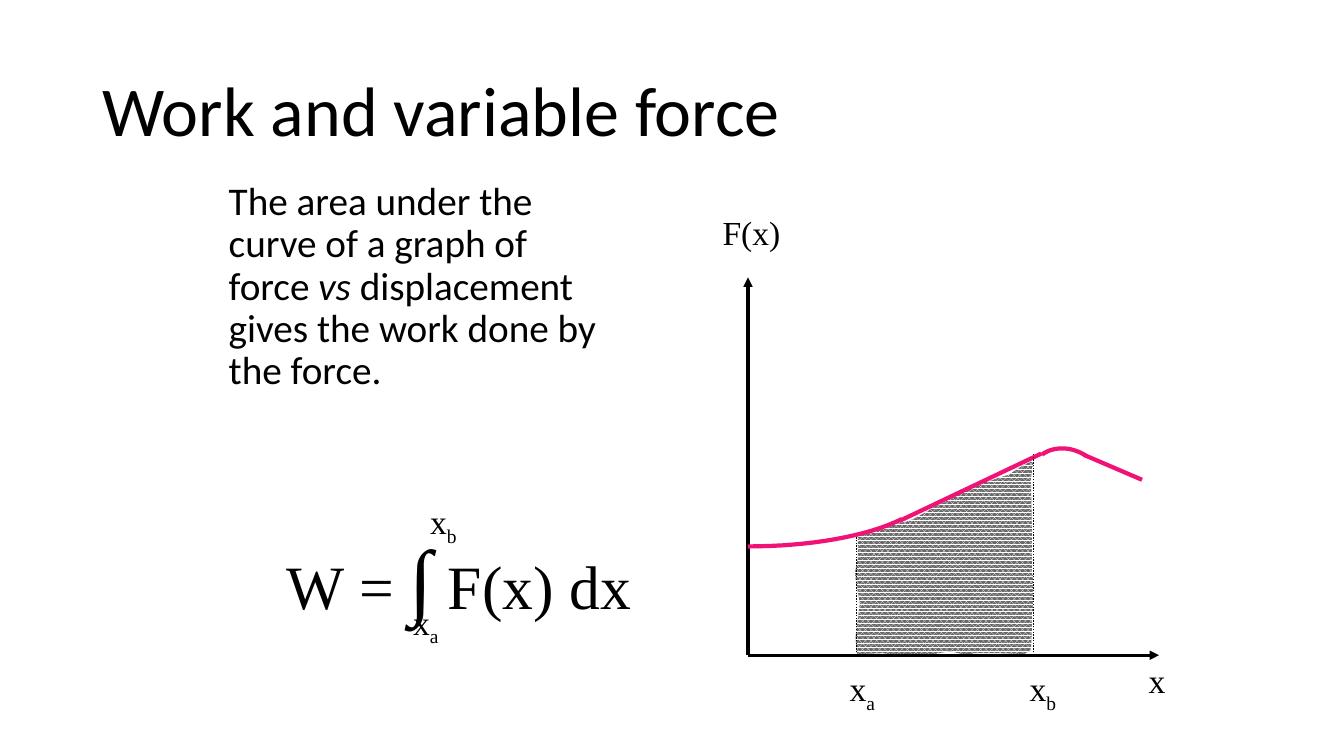
from pptx import Presentation
from pptx import util as u
from pptx.dml import color
from pptx.enum import dml, shapes, text
from pptx.oxml import parse_xml
from pptx.oxml.ns import nsdecls, qn

SLIDE_SIZE = (33.87, 19.05)
BLACK, PINK, WHITE, GREY = "000000", "F01276", "FFFFFF", "696969"
SANS, SERIF = "Calibri", "Times New Roman"

TITLE = [("Work and variable force", {})]
STATEMENT = [
    ("The area under the curve of a graph of force ", {}),
    ("vs", {"italic": True}),
    (" displacement gives the work done by the force.", {}),
]
INTEGRAL = [("W = ", {}), ("∫", {"size": u.Pt(60)}), (" F(x) dx", {})]
LOWER = [("x", {}), ("a", {"baseline": "-25000"})]
UPPER = [("x", {}), ("b", {"baseline": "-25000"})]

TITLE_BOX = (2.33, 1.02, 29.21, 3.68)
STATEMENT_BOX = (5.51, 4.45, 9.96, 8.86)
GRAPH_LABELS = [
    ([("F(x)", {})], (17.96, 5.21, 1.98, 1.27), 24),
    ([("x", {})], (28.7, 16.51, 0.94, 1.27), 24),
    (LOWER, (21.16, 16.71, 1.19, 1.27), 24),
    (UPPER, (25.7, 16.71, 1.22, 1.27), 24),
]
FORMULA_LABELS = [
    (INTEGRAL, (6.98, 13.13, 9.19, 2.79), 44),
    (LOWER, (10.16, 15.04, 1.19, 1.27), 24),
    (UPPER, (10.59, 12.5, 1.22, 1.27), 24),
]

ORIGIN = (18.85, 16.51)
AXIS_ENDS = [(18.85, 6.99), (29.21, 16.51)]
BOUNDS = [(21.59, 13.54), (26.04, 11.43)]
SLOPES = [((22.66, 13.13), (26.24, 11.43)), ((27.31, 11.46), (28.78, 12.09))]
BENDS = [
    [[(18.85, 13.77), (20.42, 13.77), (21.87, 13.51), (22.73, 13.08)]],
    [[(26.26, 11.46), (26.39, 11.35), (26.59, 11.3), (26.77, 11.3)],
     [(26.77, 11.3), (27, 11.3), (27.2, 11.38), (27.36, 11.48)]],
]
AREA = [
    (21.62, 13.51), (22.1, 13.39), (22.43, 13.23), (22.91, 13.13),
    (23.29, 12.93), (23.65, 12.7), (23.83, 12.65), (24.21, 12.34),
    (24.87, 12.14), (25.43, 11.96), (25.68, 11.79), (26.01, 11.61),
    (26.04, 11.68), (25.98, 12.04), (26.04, 15.14), (25.98, 16.38),
    (25.81, 16.48), (25.17, 16.46), (24.54, 16.46), (24.36, 16.51),
    (23.95, 16.41), (23.65, 16.46), (23.14, 16.56), (22.23, 16.46),
    (21.72, 16.48), (21.64, 16.54), (21.59, 16.43), (21.56, 16.05),
    (21.67, 15.21), (21.54, 14.45), (21.62, 14.07),
]

PARAGRAPH = {"alignment": text.PP_ALIGN.LEFT, "line_spacing": 0.9}
FRAME = {"word_wrap": True, "auto_size": text.MSO_AUTO_SIZE.NONE}
LABEL_FRAME = {"word_wrap": False, "auto_size": text.MSO_AUTO_SIZE.SHAPE_TO_FIT_TEXT}


def rgb(value):
    return color.RGBColor.from_string(value)


def apply(target, values):
    for key, value in values.items():
        setattr(target, key, value)


def cm(values):
    return [u.Cm(value) for value in values]


def write(shape, runs, font, size, frame, paragraph):
    apply(shape.text_frame, frame)
    line = shape.text_frame.paragraphs[0]
    apply(line, paragraph)
    for words, changes in runs:
        run = line.add_run()
        run.text = words
        values = {"name": font, "size": u.Pt(size), **changes}
        baseline = values.pop("baseline", None)
        apply(run.font, values)
        run.font.color.rgb = rgb(BLACK)
        if baseline:
            run._r.get_or_add_rPr().set("baseline", baseline)


def place(shape, box):
    apply(shape, dict(zip(("left", "top", "width", "height"), cm(box))))


def label(group, runs, box, size):
    write(group.shapes.add_textbox(*cm(box)), runs, SERIF, size, LABEL_FRAME, {})


def stroke(shape, hue, width):
    shape.line.color.rgb = rgb(hue)
    shape.line.width = u.Pt(width)


def segment(group, start, end, hue, width, dash=None, arrow=False):
    link = group.shapes.add_connector(shapes.MSO_CONNECTOR.STRAIGHT, *cm(start + end))
    stroke(link, hue, width)
    if dash:
        link.line.dash_style = dash
    if arrow:
        link.line._get_or_add_ln().append(
            parse_xml(f'<a:tailEnd {nsdecls("a")} type="triangle"/>'))
    link._element.spPr.append(parse_xml(f'<a:effectLst {nsdecls("a")}/>'))


def outline(parent, points, close):
    first, *rest = [cm(point) for point in points]
    builder = parent.shapes.build_freeform(*first)
    builder.add_line_segments(rest, close=close)
    shape = builder.convert_to_shape()
    shape.shadow.inherit = False
    return shape


def bezier(corners, steps=16):
    for step in range(steps + 1):
        t = step / steps
        weights = ((1 - t) ** 3, 3 * t * (1 - t) ** 2, 3 * t * t * (1 - t), t ** 3)
        yield tuple(sum(w * c[axis] for w, c in zip(weights, corners)) for axis in (0, 1))


def main():
    deck = Presentation()
    deck.slide_width, deck.slide_height = cm(SLIDE_SIZE)
    slide = deck.slides.add_slide(deck.slide_layouts[1])
    title, statement = slide.placeholders

    place(title, TITLE_BOX)
    write(title, TITLE, SANS, 50,
          {**FRAME, "vertical_anchor": text.MSO_ANCHOR.MIDDLE}, PARAGRAPH)
    place(statement, STATEMENT_BOX)
    write(statement, STATEMENT, SANS, 28, FRAME, {**PARAGRAPH, "space_before": u.Pt(10)})
    bullet = statement.text_frame.paragraphs[0]._p.get_or_add_pPr()
    bullet.set("marL", "0")
    bullet.set("indent", "0")
    bullet.append(bullet.makeelement(qn("a:buNone")))

    area = outline(slide, AREA, True)
    area.fill.patterned()
    area.fill.pattern = dml.MSO_PATTERN.PERCENT_75
    area.fill.fore_color.rgb = rgb(WHITE)
    area.fill.back_color.rgb = rgb(GREY)
    area.line.fill.background()
    title._element.addprevious(area._element)

    graph = slide.shapes.add_group_shape()
    for end in AXIS_ENDS:
        segment(graph, ORIGIN, end, BLACK, 2.25, arrow=True)
    for bend, slope in zip(BENDS, SLOPES):
        arc = outline(graph, [point for part in bend for point in bezier(part)], False)
        arc.fill.background()
        stroke(arc, PINK, 3)
        segment(graph, *slope, PINK, 3)
    for runs, box, size in GRAPH_LABELS:
        label(graph, runs, box, size)
    for top in BOUNDS:
        segment(graph, (top[0], ORIGIN[1]), top, BLACK, 1, dash=dml.MSO_LINE.ROUND_DOT)

    formula = slide.shapes.add_group_shape()
    for runs, box, size in FORMULA_LABELS:
        label(formula, runs, box, size)

    deck.save("out.pptx")


if __name__ == "__main__":
    main()
